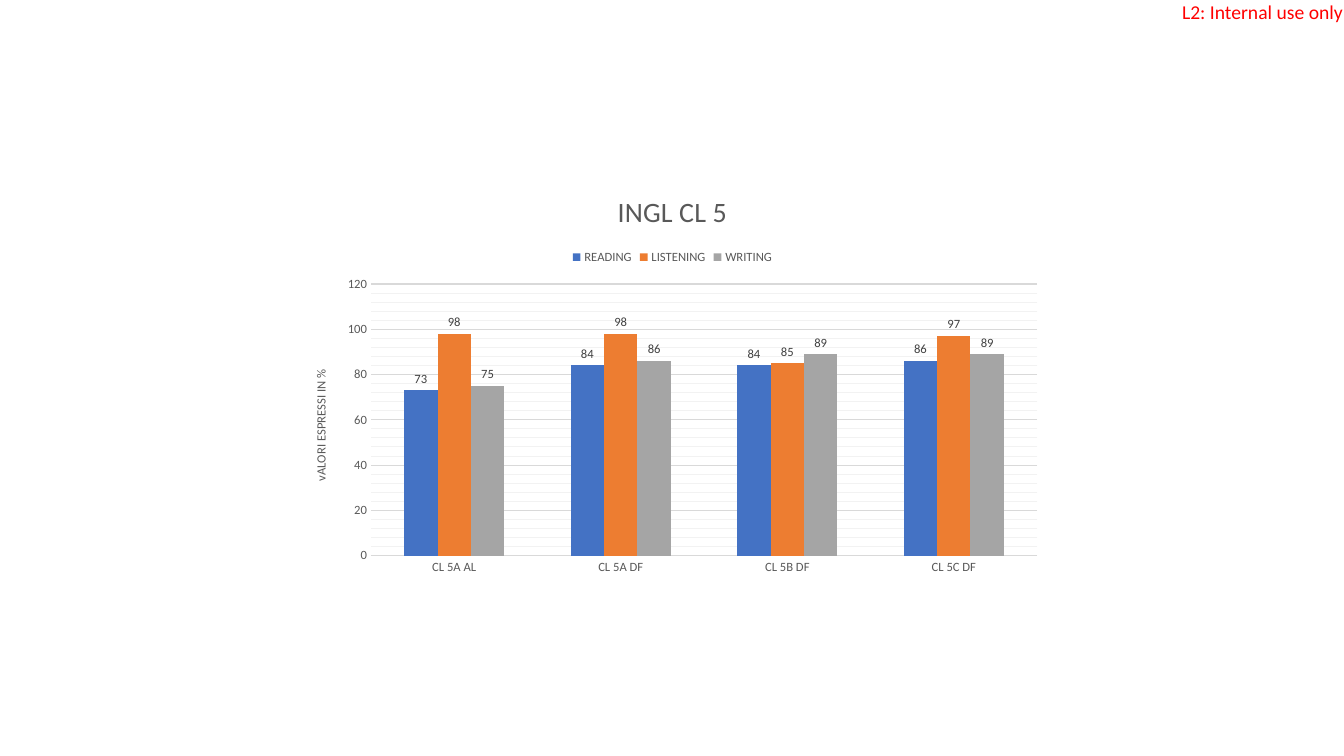
from copy import deepcopy
from dataclasses import dataclass

from pptx import Presentation
from pptx import util as u
from pptx.chart import data as chart_data
from pptx.dml.color import RGBColor
from pptx.enum import chart as ch
from pptx.enum import text
from pptx.oxml import ns

FONT = "Calibri"
COLOURS = {
    "notice": "FF0000",
    "label": "595959",
    "value": "404040",
    "grid": "D9D9D9",
    "fine_grid": "F2F2F2",
    "reading": "4472C4",
    "listening": "ED7D31",
    "writing": "A5A5A5",
}
CLASSES = ("CL 5A AL", "CL 5A DF", "CL 5B DF", "CL 5C DF")


@dataclass(frozen=True)
class Skill:
    name: str
    colour: str
    scores: tuple[int, ...]


SKILLS = (
    Skill("READING", "reading", (73, 84, 84, 86)),
    Skill("LISTENING", "listening", (98, 98, 85, 97)),
    Skill("WRITING", "writing", (75, 86, 89, 89)),
)


def rgb(key: str) -> RGBColor:
    return RGBColor.from_string(COLOURS[key])


def style_font(font, size: float, colour: str) -> None:
    font.name = FONT
    font.size = u.Pt(size)
    font.bold = False
    font.color.rgb = rgb(colour)


def style_line(line, colour: str) -> None:
    line.color.rgb = rgb(colour)
    line.width = u.Pt(0.75)


def add_run(frame, wording: str, size: float, colour: str) -> None:
    run = frame.paragraphs[0].add_run()
    run.text = wording
    style_font(run.font, size, colour)


def add_notice(slide) -> None:
    notice = slide.shapes.add_textbox(u.Cm(29.79), u.Cm(0), u.Cm(4.17), u.Cm(0.58))
    frame = notice.text_frame
    frame.margin_left = frame.margin_right = 0
    frame.margin_top = frame.margin_bottom = 0
    frame.word_wrap = True
    frame.auto_size = text.MSO_AUTO_SIZE.SHAPE_TO_FIT_TEXT
    add_run(frame, "L2: Internal use only", 14, "notice")


def style_class_axis(axis) -> None:
    axis.major_tick_mark = axis.minor_tick_mark = ch.XL_TICK_MARK.NONE
    axis.has_major_gridlines = False
    style_font(axis.tick_labels.font, 9, "label")
    style_line(axis.format.line, "grid")


def style_gridlines(axis) -> None:
    axis.has_major_gridlines = axis.has_minor_gridlines = True
    line = axis.major_gridlines.format.line
    style_line(line, "fine_grid")
    major = axis._element.find(ns.qn("c:majorGridlines"))
    minor = axis._element.find(ns.qn("c:minorGridlines"))
    minor.append(deepcopy(major.find(ns.qn("c:spPr"))))
    style_line(line, "grid")


def style_score_axis(axis) -> None:
    axis.minimum_scale, axis.maximum_scale = 0, 120
    axis.major_unit, axis.minor_unit = 20, 4
    axis.major_tick_mark = axis.minor_tick_mark = ch.XL_TICK_MARK.NONE
    style_gridlines(axis)
    axis.format.line.fill.background()
    axis.tick_labels.number_format = "0"
    axis.tick_labels.number_format_is_linked = False
    style_font(axis.tick_labels.font, 9, "label")
    add_run(axis.axis_title.text_frame, "vALORI ESPRESSI IN %", 9, "label")


def style_skill(bars, skill: Skill) -> None:
    bars.format.fill.solid()
    bars.format.fill.fore_color.rgb = rgb(skill.colour)
    bars.invert_if_negative = False
    labels = bars.data_labels
    labels.show_value = True
    labels.position = ch.XL_LABEL_POSITION.OUTSIDE_END
    labels.number_format = "0"
    labels.number_format_is_linked = False
    style_font(labels.font, 9, "value")


def add_scores(slide) -> None:
    scores = chart_data.CategoryChartData(number_format="0")
    scores.categories = CLASSES
    for skill in SKILLS:
        scores.add_series(skill.name, skill.scores)
    chart = slide.shapes.add_chart(
        ch.XL_CHART_TYPE.COLUMN_CLUSTERED,
        u.Cm(7.37), u.Cm(4.37), u.Cm(19.15), u.Cm(10.31), scores,
    ).chart
    chart.font.name = FONT
    chart.font.size = u.Pt(10)
    add_run(chart.chart_title.text_frame, "INGL CL 5", 20, "label")
    chart.has_legend = True
    chart.legend.position = ch.XL_LEGEND_POSITION.TOP
    chart.legend.include_in_layout = False
    style_font(chart.legend.font, 9, "label")
    style_class_axis(chart.category_axis)
    style_score_axis(chart.value_axis)
    plot = chart.plots[0]
    plot.gap_width = 199
    plot.overlap = 0
    plot.vary_by_categories = False
    for bars, skill in zip(plot.series, SKILLS):
        style_skill(bars, skill)


def main() -> None:
    deck = Presentation()
    deck.slide_width, deck.slide_height = u.Cm(33.87), u.Cm(19.05)
    slide = deck.slides.add_slide(deck.slide_layouts[6])
    add_notice(slide)
    add_scores(slide)
    deck.save("out.pptx")


if __name__ == "__main__":
    main()
